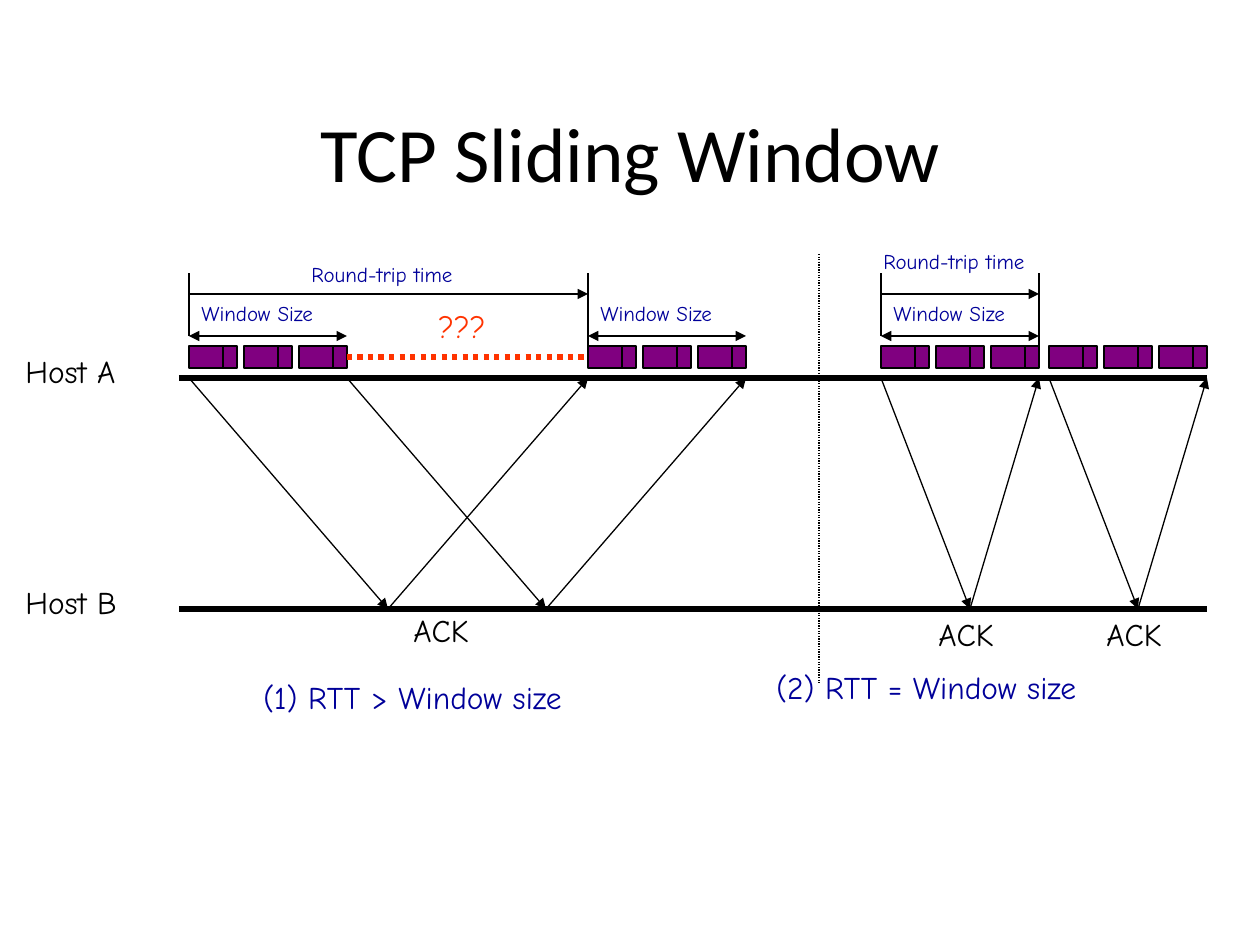
from lxml import etree
from pptx import Presentation
from pptx import util as u
from pptx.dml.color import RGBColor
from pptx.enum import dml, shapes, text
from pptx.oxml.ns import qn

PX = 914400 // 126
BLACK, BLUE, PURPLE, RED = "000000", "000099", "800080", "FF3300"

HOST_A, HOST_B = 378, 609
AXIS_LEFT, AXIS_RIGHT = 179, 1207
PACKET_TOP, PACKET_WIDTH, PACKET_HEIGHT = 346, 48, 22
PACKET_STEP, HEADER_AT, PACKET_COUNT = 55, 34, 3
SIZE_Y, RTT_Y, TICK_TOP, LABEL_Y = 336, 294, 273, 294

WINDOWS = [189, 588, 881, 1049]
WINDOW_WIDTH = 158
SIZED_WINDOWS = WINDOWS[:3]
ROUND_TRIPS = [(189, 588), (881, 1039)]
# start at host A, arrival at host B, return to host A
EXCHANGES = [(189, 388, 588), (347, 546, 746), (881, 970, 1039), (1049, 1138, 1207)]
# text, left, top, width, height, size, colour
LABELS = [
    ("Host A", 13, 346, 163, 63, 18, BLACK),
    ("Host B", 13, 577, 159, 63, 18, BLACK),
    ("ACK", 401, 605, 107, 63, 18, BLACK),
    ("ACK", 926, 609, 107, 63, 18, BLACK),
    ("ACK", 1094, 609, 107, 63, 18, BLACK),
    ("Round-trip time", 299, 255, 179, 38, 12, BLUE),
    ("Round-trip time", 871, 242, 179, 38, 12, BLUE),
    ("(1) RTT > Window size", 251, 672, 455, 63, 18, BLUE),
    ("(2) RTT = Window size", 764, 662, 467, 63, 18, BLUE),
    ("???", 426, 301, 92, 63, 18, RED),
]

deck = Presentation()
deck.slide_width, deck.slide_height = u.Inches(10), u.Inches(7.5)
page = deck.slides.add_slide(deck.slide_layouts[5])


def px(*values):
    return [value * PX for value in values]


def rgb(value):
    return RGBColor.from_string(value)


def write(frame, words, size, colour, font="Comic Neue", align=text.PP_ALIGN.LEFT):
    para = frame.paragraphs[0]
    para.alignment = align
    span = para.add_run()
    span.text = words
    span.font.name, span.font.size = font, u.Pt(size)
    span.font.color.rgb = rgb(colour)


def add_label(words, left, top, width, height, size, colour):
    frame = page.shapes.add_textbox(*px(left, top, width, height)).text_frame
    frame.word_wrap = False
    frame.auto_size = text.MSO_AUTO_SIZE.SHAPE_TO_FIT_TEXT
    write(frame, words, size, colour)


def add_line(x1, y1, x2, y2, colour=BLACK, weight=0.75, dotted=False, head=False, tail=False):
    """Draw a straight line; head and tail put arrowheads at its start and end."""
    line = page.shapes.add_connector(shapes.MSO_CONNECTOR.STRAIGHT, *px(x1, y1, x2, y2))
    line.line.color.rgb = rgb(colour)
    line.line.width = u.Pt(weight)
    if dotted:
        line.line.dash_style = dml.MSO_LINE.ROUND_DOT
    outline = line.line._get_or_add_ln()
    for tag, wanted in (("a:headEnd", head), ("a:tailEnd", tail)):
        if wanted:
            etree.SubElement(outline, qn(tag), type="triangle")
    etree.SubElement(line._element.spPr, qn("a:effectLst"))
    return line


def add_packet(left):
    packet = page.shapes.add_shape(
        shapes.MSO_SHAPE.RECTANGLE, *px(left, PACKET_TOP, PACKET_WIDTH, PACKET_HEIGHT))
    packet.shadow.inherit = False
    packet.fill.solid()
    packet.fill.fore_color.rgb = rgb(PURPLE)
    packet.line.color.rgb = rgb(BLACK)
    packet.line.width = u.Pt(0.75)
    header = left + HEADER_AT
    add_line(header, PACKET_TOP, header, PACKET_TOP + PACKET_HEIGHT)
    return packet


title = page.shapes.title
title.left, title.top, title.width, title.height = px(95, 73, 1071, 158)
title.text_frame.vertical_anchor = text.MSO_ANCHOR.MIDDLE
write(title.text_frame, "TCP Sliding Window", 44, BLACK, "Calibri", text.PP_ALIGN.CENTER)

for host in (HOST_A, HOST_B):
    add_line(AXIS_LEFT, host, AXIS_RIGHT, host, weight=3)
add_line(819, 254, 819, 683, dotted=True)

packets = [[add_packet(left + i * PACKET_STEP) for i in range(PACKET_COUNT)]
           for left in WINDOWS]
idle = add_line(347, 357, 588, 357, colour=RED, weight=3, dotted=True)
idle.begin_connect(packets[0][-1], 3)
idle.end_connect(packets[1][0], 1)

for sent, received, returned in EXCHANGES:
    add_line(sent, HOST_A, received, HOST_B, tail=True)
    add_line(returned, HOST_A, received, HOST_B, head=True)

for left in SIZED_WINDOWS:
    add_line(left, SIZE_Y, left + WINDOW_WIDTH, SIZE_Y, head=True, tail=True)
    add_label("Window Size", left, LABEL_Y, 151, 38, 12, BLUE)

for start, end in ROUND_TRIPS:
    add_line(start, RTT_Y, end, RTT_Y, tail=True)
    add_line(start, SIZE_Y, start, TICK_TOP)
    add_line(end, PACKET_TOP + PACKET_HEIGHT, end, TICK_TOP)

for label in LABELS:
    add_label(*label)

deck.save("out.pptx")
